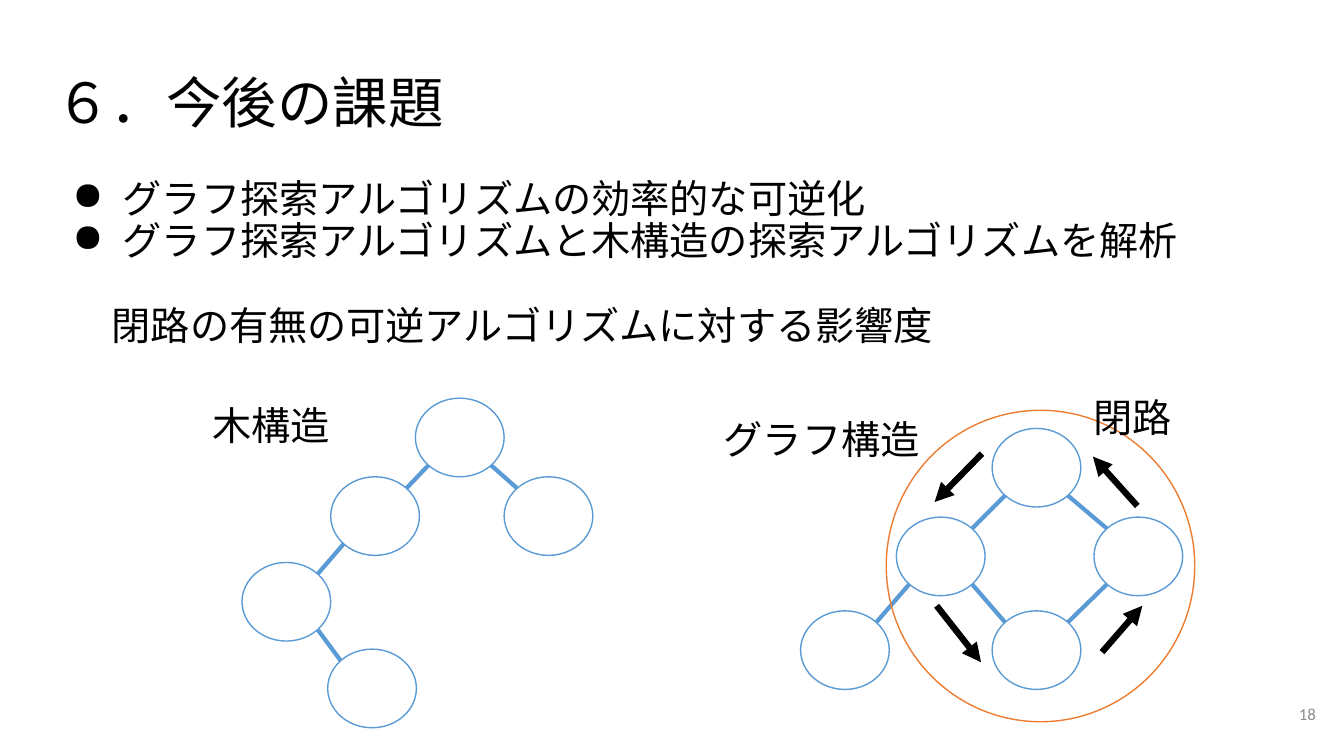
import math
from dataclasses import dataclass

import pptx
import pptx.dml.color
import pptx.enum.shapes
import pptx.enum.text
import pptx.oxml.ns
import pptx.util
from lxml import etree

Inches = pptx.util.Inches
Pt = pptx.util.Pt
Anchor = pptx.enum.text.MSO_ANCHOR
Align = pptx.enum.text.PP_ALIGN


@dataclass(frozen=True)
class Theme:
    """Colours, font and sizes of the slide."""
    font: str = "Calibri"
    ink: str = "000000"
    muted: str = "8C8C8C"
    paper: str = "FFFFFF"
    node: str = "5B9BD5"
    cycle: str = "ED7D31"
    title_size: float = 39.6
    text_size: float = 28
    number_size: float = 12
    thin: float = 1
    edge: float = 3
    arrow: float = 4.5


THEME = Theme()
NODE_WIDTH, NODE_HEIGHT = 0.88, 0.78


def colour(value):
    """Return an RGB colour from its hex digits."""
    return pptx.dml.color.RGBColor.from_string(value)


def add_element(parent, tag, **attributes):
    """Append a drawing element to its parent."""
    return etree.SubElement(parent, pptx.oxml.ns.qn(tag), **attributes)


def add_frame(slide, box, inset=0.1, anchor=Anchor.TOP):
    """Add a wrapping text box and return its text frame."""
    frame = slide.shapes.add_textbox(*map(Inches, box)).text_frame
    frame.word_wrap = True
    frame.vertical_anchor = anchor
    frame.margin_left = frame.margin_right = Inches(0.1)
    frame.margin_top = frame.margin_bottom = Inches(inset)
    return frame


def write(paragraph, text, size=THEME.text_size, ink=THEME.ink, align=Align.LEFT,
          spacing=1.0, before=0, margin=0, indent=0, bullet=None):
    """Write formatted text into a paragraph."""
    run = paragraph.add_run()
    run.text = text
    run.font.name = THEME.font
    run.font.size = Pt(size)
    run.font.color.rgb = colour(ink)
    paragraph.alignment = align
    paragraph.line_spacing = spacing
    paragraph.space_before = Pt(before)
    properties = paragraph._p.get_or_add_pPr()
    properties.set("marL", str(Inches(margin)))
    properties.set("indent", str(Inches(indent)))
    if bullet:
        add_element(properties, "a:buChar", char=bullet)


def add_label(slide, text, box):
    """Add a one-line caption."""
    write(add_frame(slide, box, inset=0.05).paragraphs[0], text)


def add_ellipse(slide, box, line, fill=None):
    """Add an outlined ellipse."""
    shape = slide.shapes.add_shape(pptx.enum.shapes.MSO_SHAPE.OVAL, *map(Inches, box))
    shape.shadow.inherit = False
    if fill:
        shape.fill.solid()
        shape.fill.fore_color.rgb = colour(fill)
    else:
        shape.fill.background()
    shape.line.color.rgb = colour(line)
    shape.line.width = Pt(THEME.thin)


def add_line(slide, start, end, line, width, arrow=False):
    """Add a straight connector, with an arrowhead if asked."""
    connector = slide.shapes.add_connector(
        pptx.enum.shapes.MSO_CONNECTOR.STRAIGHT, *map(Inches, (*start, *end)))
    connector.line.color.rgb = colour(line)
    connector.line.width = Pt(width)
    if arrow:
        add_element(connector.line._get_or_add_ln(), "a:tailEnd", type="triangle")
    add_element(connector._element.spPr, "a:effectLst")


def rim_point(node, target):
    """Return the diagonal point of a node's rim that faces the target."""
    diagonal = math.sqrt(0.5)
    extents = (NODE_WIDTH, NODE_HEIGHT)
    return tuple(
        corner + extent / 2 * (1 + math.copysign(diagonal, goal - corner))
        for corner, goal, extent in zip(node, target, extents))


def add_network(slide, nodes, edges):
    """Draw nodes and the edges that join them."""
    for left, top in nodes.values():
        add_ellipse(slide, (left, top, NODE_WIDTH, NODE_HEIGHT), THEME.node, THEME.paper)
    for first, second in edges:
        start, end = nodes[first], nodes[second]
        add_line(slide, rim_point(start, end), rim_point(end, start), THEME.node, THEME.edge)


def shift(points, left, top):
    """Move named points to the corner of a region."""
    return {name: (left + x, top + y) for name, (x, y) in points.items()}


def add_title(slide, box):
    """Add the slide title."""
    write(add_frame(slide, box).paragraphs[0], "６．今後の課題",
          size=THEME.title_size, spacing=0.9)


def add_body(slide, box):
    """Add the two bullets and the remark below them."""
    frame = add_frame(slide, box)
    bulleted = dict(margin=0.67, indent=-0.5, bullet="●")
    items = (
        ("グラフ探索アルゴリズムの効率的な可逆化", bulleted),
        ("グラフ探索アルゴリズムと木構造の探索アルゴリズムを解析", bulleted),
        ("閉路の有無の可逆アルゴリズムに対する影響度", dict(margin=0.56, before=30.5)),
    )
    for index, (text, options) in enumerate(items):
        paragraph = frame.add_paragraph() if index else frame.paragraphs[0]
        write(paragraph, text, spacing=0.9, **options)


def add_tree(slide, left, top):
    """Draw the tree structure with its caption."""
    nodes = shift({
        "root": (2.11, 0.02), "right": (2.99, 0.8), "left": (1.27, 0.8),
        "child": (0.39, 1.65), "leaf": (1.24, 2.51),
    }, left, top)
    edges = (("root", "left"), ("root", "right"), ("left", "child"), ("leaf", "child"))
    add_network(slide, nodes, edges)
    add_label(slide, "木構造", (left, top, 1.94, 0.57))


def add_graph(slide, left, top):
    """Draw the graph structure, its cycle and the captions."""
    nodes = shift({
        "top": (2.76, 0.4), "right": (3.77, 1.28), "outer": (0.86, 2.21),
        "bottom": (2.76, 2.21), "left": (1.81, 1.28),
    }, left, top)
    edges = (("top", "left"), ("top", "right"), ("left", "outer"),
             ("bottom", "left"), ("bottom", "right"))
    add_network(slide, nodes, edges)
    add_label(slide, "グラフ構造", (left, top + 0.22, 2.23, 0.57))
    add_ellipse(slide, (left + 1.71, top + 0.22, 3.06, 3.09), THEME.cycle)
    add_label(slide, "閉路", (left + 3.67, top, 1.8, 0.57))
    arrows = (
        ((2.66, 0.65), (2.19, 1.13)), ((2.21, 2.16), (2.65, 2.72)),
        ((3.85, 2.62), (4.25, 2.16)), ((4.2, 1.17), (3.76, 0.68)),
    )
    for start, end in arrows:
        ends = shift({"start": start, "end": end}, left, top)
        add_line(slide, ends["start"], ends["end"], THEME.ink, THEME.arrow, arrow=True)


def add_page_number(slide, box):
    """Add the page number."""
    frame = add_frame(slide, box, anchor=Anchor.MIDDLE)
    write(frame.paragraphs[0], "18", size=THEME.number_size, ink=THEME.muted, align=Align.RIGHT)


def main():
    """Build and save the presentation."""
    presentation = pptx.Presentation()
    presentation.slide_width = Inches(13.33)
    presentation.slide_height = Inches(7.5)
    slide = presentation.slides.add_slide(presentation.slide_layouts[6])
    add_title(slide, (0.45, 0.65, 12.42, 0.84))
    add_body(slide, (0.45, 1.68, 12.42, 4.98))
    add_tree(slide, 2.01, 3.93)
    add_graph(slide, 7.08, 3.85)
    add_page_number(slide, (12.35, 6.8, 0.8, 0.57))
    presentation.save("out.pptx")


if __name__ == "__main__":
    main()
